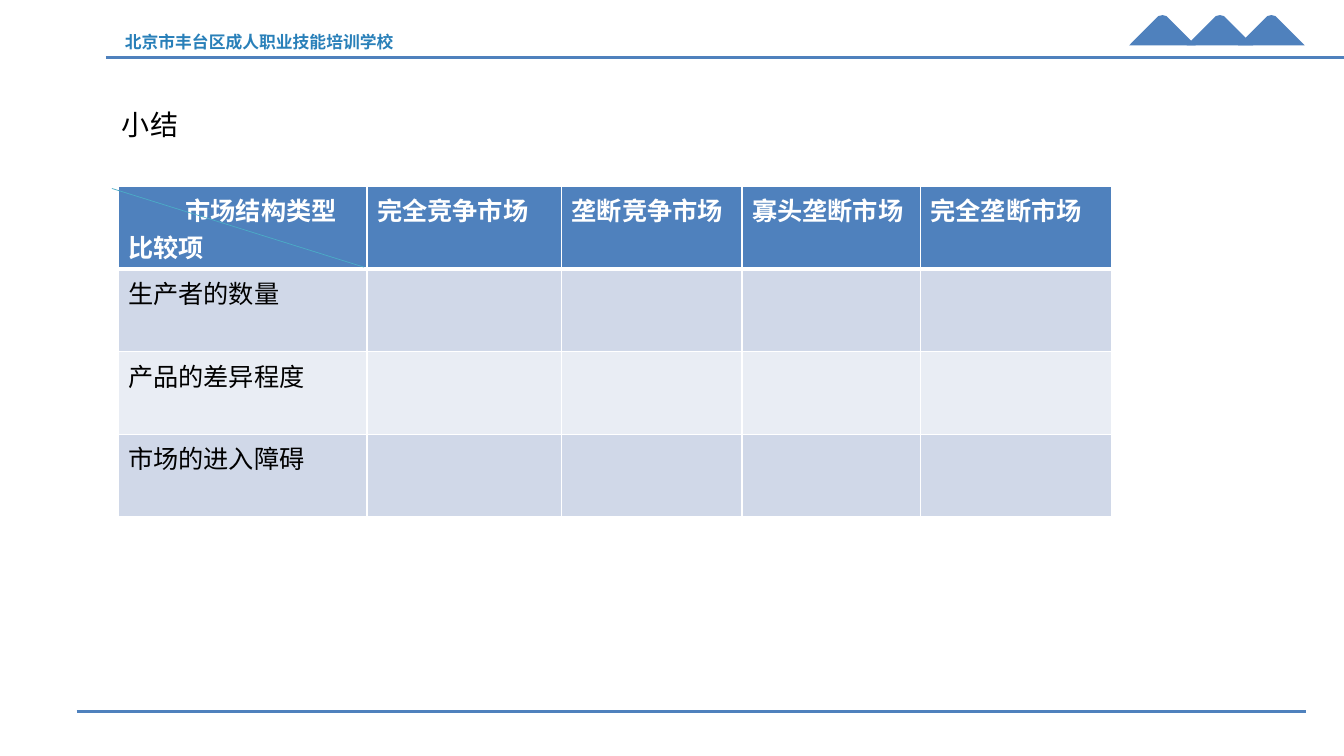
from pptx import Presentation
from pptx import util as u
from pptx.dml.color import RGBColor
from pptx.enum import shapes as sh, text as tx
from pptx.oxml import parse_xml
from pptx.oxml.ns import nsdecls
from lxml import etree

PX = 9144  # 100 px to the inch
theme = dict(font="Arial", blue="4F81BD", name="2980B9", slash="4BACC6",
             bands=["D0D8E8", "E9EDF4"], white="FFFFFF", black="000000",
             small=12, cell=18, title=20)


def style(par, size, color, bold=False):
    look = dict(name=theme["font"], size=u.Pt(size), bold=bold)
    for key, val in look.items():
        setattr(par.font, key, val)
    par.font.color.rgb = RGBColor.from_string(color)


def fit(frame, wrap):
    look = dict(word_wrap=wrap, vertical_anchor=tx.MSO_ANCHOR.TOP,
                auto_size=tx.MSO_AUTO_SIZE.SHAPE_TO_FIT_TEXT)
    for key, val in look.items():
        setattr(frame, key, val)


deck = Presentation()
deck.slide_width, deck.slide_height = 1333 * PX, 750 * PX
slide = deck.slides.add_slide(deck.slide_layouts[5])
parts = slide.shapes

# Title
title = parts.title
place = dict(left=111, top=102, width=76, height=44)
for key, val in place.items():
    setattr(title, key, val * PX)
title.text_frame.text = "小结"
fit(title.text_frame, False)
head = title.text_frame.paragraphs[0]
head.alignment = tx.PP_ALIGN.LEFT
style(head, theme["title"], theme["black"])

# School name
school = parts.add_textbox(114 * PX, 27 * PX, 307 * PX, 30 * PX)
school.text_frame.text = "北京市丰台区成人职业技能培训学校"
fit(school.text_frame, True)
style(school.text_frame.paragraphs[0], theme["small"], theme["name"], True)

# Row of rounded peaks
peak = [(0, 30), (2, 28), (27, 3), (29, 1), (33, 0), (37, 1), (39, 3), (64, 28), (66, 30)]
for left in (1120, 1177, 1228):
    pts = [(left + x, 15 + y) for x, y in peak]
    path = parts.build_freeform(*pts[0], scale=PX)
    path.add_line_segments(pts[1:], close=True)
    hill = path.convert_to_shape()
    hill.shadow.inherit = False
    hill.fill.solid()
    hill.fill.fore_color.rgb = RGBColor.from_string(theme["blue"])
    hill.line.fill.background()

# Comparison table
rows = [["市场结构类型\n比较项", "完全竞争市场", "垄断竞争市场", "寡头垄断市场", "完全垄断市场"],
        ["生产者的数量"], ["产品的差异程度"], ["市场的进入障碍"]]
widths = [247, 193, 179, 177, 190]
high = 82
grid = parts.add_table(len(rows), len(widths), 117 * PX, 185 * PX,
                       sum(widths) * PX, high * len(rows) * PX).table
for col, wide in zip(grid.columns, widths):
    col.width = wide * PX
for r, row in enumerate(rows):
    grid.rows[r].height = high * PX
    for c in range(len(widths)):
        cell = grid.cell(r, c)
        cell.text = row[c] if c < len(row) else ""
        fill = theme["bands"][(r - 1) % 2] if r else theme["blue"]
        cell.fill.solid()
        cell.fill.fore_color.rgb = RGBColor.from_string(fill)
        for par in cell.text_frame.paragraphs:
            style(par, theme["cell"], theme["black"] if r else theme["white"], r == 0)
        # Thick rule under the header, thin ones elsewhere
        edges = dict(L=1, R=1, T=3 if r == 1 else 1, B=1 if r else 3)
        props = cell._tc.get_or_add_tcPr()
        for i, (side, wide) in enumerate(edges.items()):
            props.insert(i, parse_xml(
                f'<a:ln{side} {nsdecls("a")} w="{u.Pt(wide)}"><a:solidFill>'
                f'<a:srgbClr val="{theme["white"]}"/></a:solidFill></a:ln{side}>'))
corner = grid.cell(0, 0).text_frame.paragraphs[0]
corner._p.get_or_add_pPr().set("marL", str(57 * PX))

# Header rule, footer rule and corner slash
lines = [(105, 57, 1333, 57, "blue", 2.25),
         (76, 706, 1295, 706, "blue", 2.25),
         (111, 187, 361, 265, "slash", 0.5)]
for x1, y1, x2, y2, color, wide in lines:
    rule = parts.add_connector(sh.MSO_CONNECTOR.STRAIGHT, x1 * PX, y1 * PX, x2 * PX, y2 * PX)
    rule.line.color.rgb = RGBColor.from_string(theme[color])
    rule.line.width = u.Pt(wide)
    etree.SubElement(rule._element.spPr,
                     "{http://schemas.openxmlformats.org/drawingml/2006/main}effectLst")

deck.save("out.pptx")
